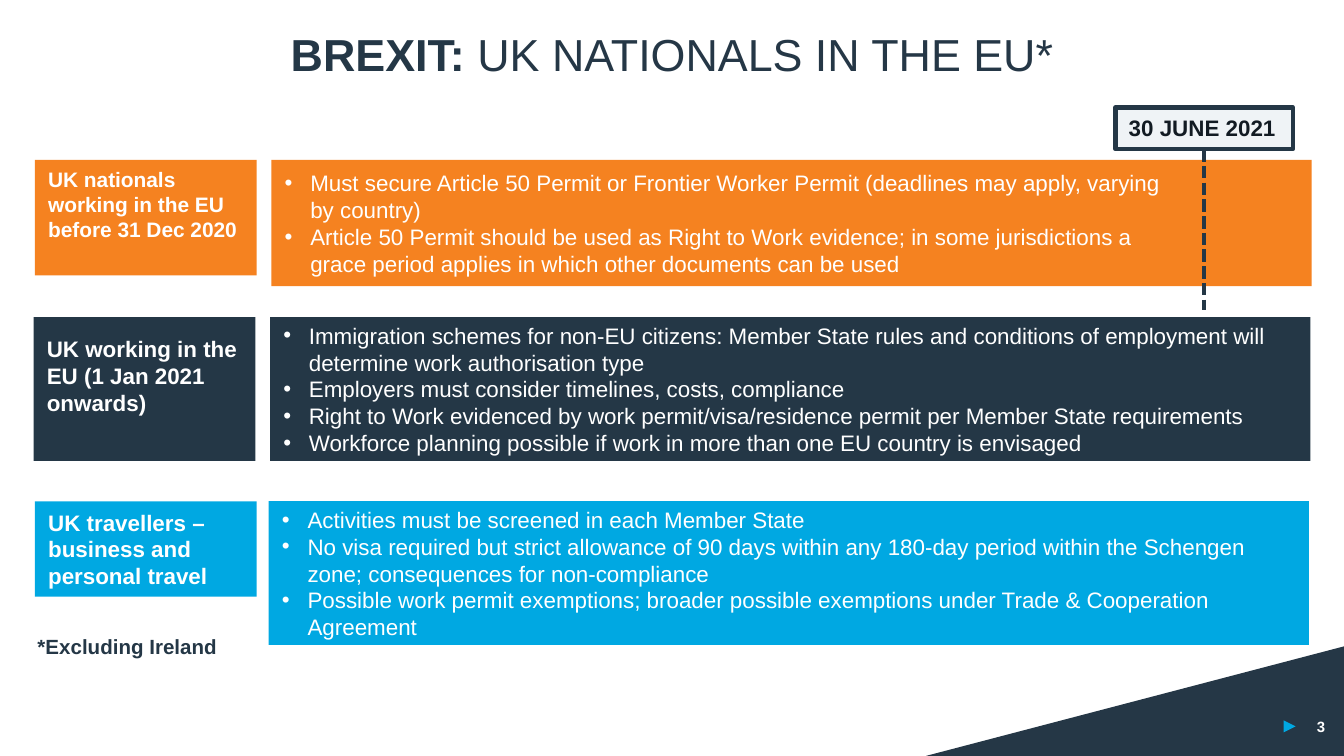
"""Build a slide on work and travel rules for UK nationals in the EU."""
import pptx
import pptx.dml.color
import pptx.enum.dml
import pptx.enum.shapes
import pptx.enum.text
import pptx.util
from lxml import etree

Inches = pptx.util.Inches
Pt = pptx.util.Pt
RGBColor = pptx.dml.color.RGBColor
Shape = pptx.enum.shapes.MSO_SHAPE
Anchor = pptx.enum.text.MSO_ANCHOR
Align = pptx.enum.text.PP_ALIGN

WHITE = RGBColor(0xFF, 0xFF, 0xFF)
NAVY = RGBColor(0x24, 0x37, 0x46)
SLATE = RGBColor(0x25, 0x37, 0x46)
ORANGE = RGBColor(0xF5, 0x82, 0x20)
BLUE = RGBColor(0x00, 0xA8, 0xE2)
PALE = RGBColor(0xEF, 0xF3, 0xF6)
INK = RGBColor(0x12, 0x1B, 0x23)
DRAWING_NS = "{http://schemas.openxmlformats.org/drawingml/2006/main}"


def add_block(kind, box, fill):
    block = slide.shapes.add_shape(kind, *[Inches(length) for length in box])
    block.shadow.inherit = False
    block.fill.solid()
    block.fill.fore_color.rgb = fill
    block.line.fill.background()
    return block


def write(shape, lines, size, color, bold=False, anchor=Anchor.MIDDLE, align=Align.LEFT, bulleted=False):
    frame = shape.text_frame
    frame.word_wrap = True
    frame.vertical_anchor = anchor
    frame.text = "\n".join(lines)
    for paragraph in frame.paragraphs:
        paragraph.alignment = align
        if bulleted:
            properties = paragraph._p.get_or_add_pPr()
            properties.set("marL", str(Inches(0.19)))
            properties.set("indent", str(-Inches(0.19)))
            etree.SubElement(properties, DRAWING_NS + "buFont", typeface="Arial")
            etree.SubElement(properties, DRAWING_NS + "buChar", char="•")
        for run in paragraph.runs:
            run.font.name = "Arial"
            run.font.size = Pt(size)
            run.font.bold = bold
            run.font.color.rgb = color


deck = pptx.Presentation()
deck.slide_width = Inches(10)
deck.slide_height = Inches(10) * 9 // 16
slide = deck.slides.add_slide(deck.slide_layouts[6])

corner_builder = slide.shapes.build_freeform(deck.slide_width, Inches(4.81))
corner_builder.add_line_segments([(deck.slide_width, deck.slide_height), (Inches(6.89), deck.slide_height)])
corner = corner_builder.convert_to_shape()
corner.shadow.inherit = False
corner.fill.solid()
corner.fill.fore_color.rgb = SLATE
corner.line.fill.background()

page_number = slide.shapes.add_textbox(Inches(9.64), Inches(5.34), Inches(0.22), Inches(0.13))
write(page_number, ["3"], 8, WHITE, bold=True, align=Align.RIGHT)
number_frame = page_number.text_frame
number_frame.margin_left = number_frame.margin_right = 0
number_frame.margin_top = number_frame.margin_bottom = 0
page_arrow = add_block(Shape.ISOSCELES_TRIANGLE, (9.55, 5.36, 0.09, 0.09), BLUE)
page_arrow.rotation = 90

title = slide.shapes.add_textbox(0, Inches(0.16), Inches(10), Inches(0.64))
write(title, ["BREXIT: "], 24, NAVY, bold=True, anchor=Anchor.TOP, align=Align.CENTER)
title_line = title.text_frame.paragraphs[0]
title_line.line_spacing = Pt(28)
topic = title_line.add_run()
topic.text = "UK NATIONALS IN THE EU*"
topic.font.name = "Arial"
topic.font.size = Pt(24)
topic.font.bold = False
topic.font.color.rgb = SLATE

categories = [
    (ORANGE, "UK nationals working in the EU before 31 Dec 2020",
     (0.26, 1.19, 1.65, 0.86), 11.2, Anchor.TOP, 0.05,
     ["Must secure Article 50 Permit or Frontier Worker Permit (deadlines may apply, varying by country)",
      "Article 50 Permit should be used as Right to Work evidence; in some jurisdictions a grace period "
      "applies in which other documents can be used"],
     (2.02, 1.19, 6.91, 0.94)),
    (NAVY, "UK working in the EU (1 Jan 2021 onwards)",
     (0.25, 2.36, 1.65, 1.07), 12, Anchor.MIDDLE, 0.25,
     ["Immigration schemes for non-EU citizens: Member State rules and conditions of employment will "
      "determine work authorisation type",
      "Employers must consider timelines, costs, compliance",
      "Right to Work evidenced by work permit/visa/residence permit per Member State requirements",
      "Workforce planning possible if work in more than one EU country is envisaged"],
     (2.01, 2.36, 7.74, 1.07)),
    (BLUE, "UK travellers – business and personal travel",
     (0.26, 3.73, 1.65, 0.71), 12, Anchor.MIDDLE, 0.05,
     ["Activities must be screened in each Member State",
      "No visa required but strict allowance of 90 days within any 180-day period within the Schengen "
      "zone; consequences for non-compliance",
      "Possible work permit exemptions; broader possible exemptions under Trade & Cooperation Agreement"],
     (2, 3.73, 7.74, 1.07)),
]
for fill, group, group_box, size, anchor, space_below, rules, rules_box in categories:
    rules_panel = add_block(Shape.RECTANGLE, rules_box, fill)
    write(rules_panel, rules, 12, WHITE, bulleted=True)
    group_panel = add_block(Shape.RECTANGLE, group_box, fill)
    write(group_panel, [group], size, WHITE, bold=True, anchor=anchor)
    group_panel.text_frame.margin_bottom = Inches(space_below)

deadline = add_block(Shape.RECTANGLE, (8.3, 0.8, 1.32, 0.31), PALE)
deadline.line.color.rgb = NAVY
deadline.line.width = Pt(2.25)
write(deadline, ["30 JUNE 2021"], 12, INK, bold=True, anchor=Anchor.TOP)

footnote = slide.shapes.add_textbox(Inches(0.18), Inches(4.67), Inches(1.55), Inches(0.29))
write(footnote, ["*Excluding Ireland"], 11, NAVY, bold=True, anchor=Anchor.TOP)
footnote.text_frame.word_wrap = False

after_deadline = add_block(Shape.RECTANGLE, (8.93, 1.19, 0.83, 0.94), ORANGE)

deadline_marker = slide.shapes.add_connector(
    pptx.enum.shapes.MSO_CONNECTOR.STRAIGHT, Inches(8.96), Inches(1.11), Inches(8.96), Inches(2.31))
deadline_marker.begin_connect(deadline, 2)
deadline_marker.line.color.rgb = NAVY
deadline_marker.line.width = Pt(2.25)
deadline_marker.line.dash_style = pptx.enum.dml.MSO_LINE.SQUARE_DOT
etree.SubElement(deadline_marker._element.spPr, DRAWING_NS + "effectLst")

deck.save("out.pptx")
